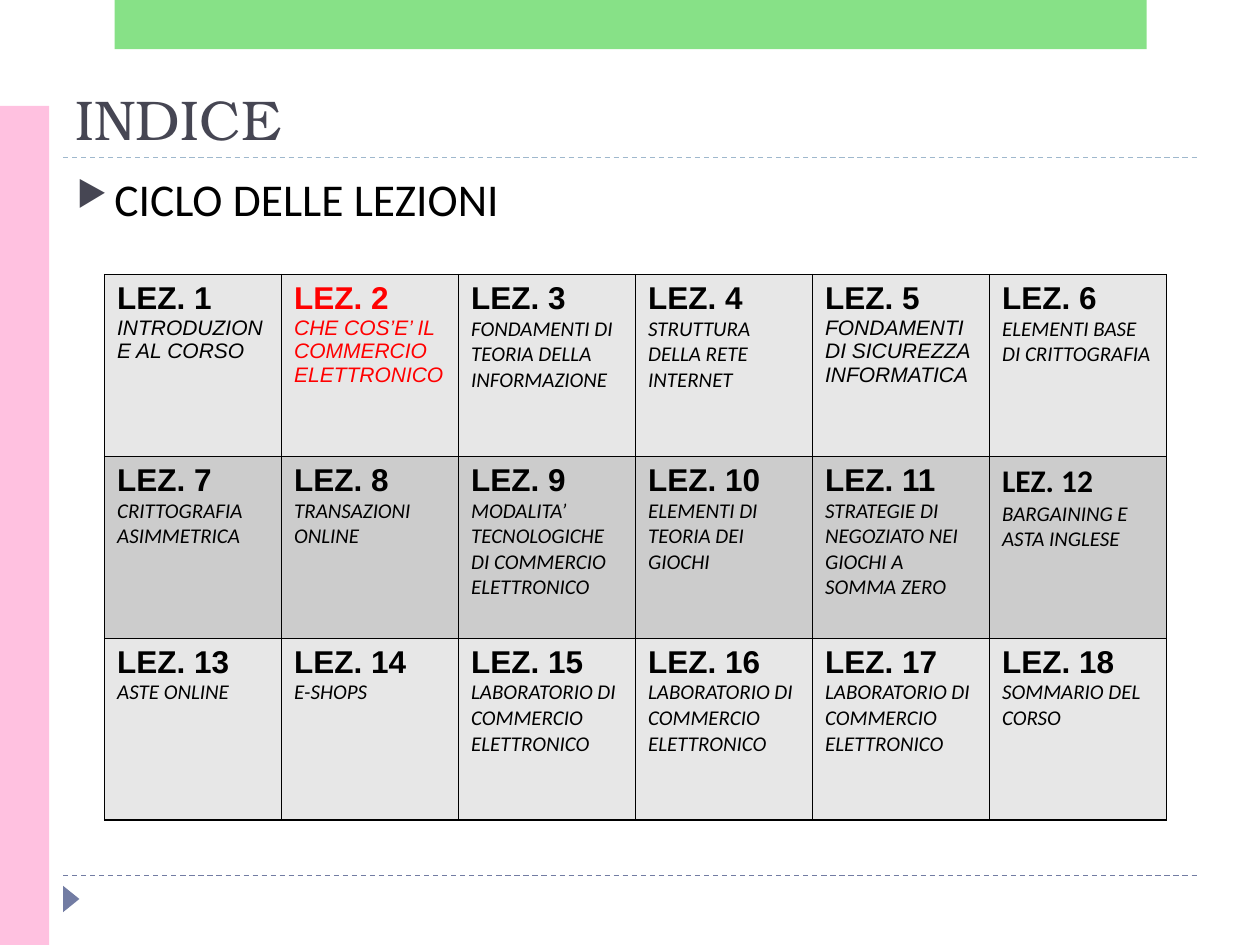
from dataclasses import dataclass

from lxml import etree
from pptx import Presentation
from pptx import util as u
from pptx.dml.color import RGBColor
from pptx.enum import dml, shapes, text
from pptx.oxml import ns

EMU_PER_PX = 9144


@dataclass(frozen=True)
class Theme:
    ink: str = "000000"
    heading: str = "464653"
    accent: str = "727CA3"
    rule: str = "9FB8CD"
    pink: str = "FFC1E0"
    green: str = "62D862"
    highlight: str = "FF0000"
    bands: tuple = ("E7E7E7", "CCCCCC")
    serif: str = "TeX Gyre Bonum"
    sans: str = "Calibri"
    plain: str = "Arial"
    title_size: int = 32
    body_size: int = 26
    lesson_size: int = 18
    topic_size: int = 12


THEME = Theme()
LESSONS = [
    ["INTRODUZIONE AL CORSO", "CHE COS’E’ IL COMMERCIO ELETTRONICO",
     "FONDAMENTI DI TEORIA DELLA\vINFORMAZIONE", "STRUTTURA DELLA RETE INTERNET",
     "FONDAMENTI DI SICUREZZA INFORMATICA", "ELEMENTI BASE DI CRITTOGRAFIA"],
    ["CRITTOGRAFIA ASIMMETRICA", "TRANSAZIONI ONLINE",
     "MODALITA’ TECNOLOGICHE DI COMMERCIO ELETTRONICO", "ELEMENTI DI TEORIA DEI GIOCHI",
     "STRATEGIE DI NEGOZIATO NEI GIOCHI A SOMMA ZERO", "BARGAINING E ASTA INGLESE"],
    ["ASTE ONLINE", "E-SHOPS"] + ["LABORATORIO DI COMMERCIO ELETTRONICO"] * 3
    + ["SOMMARIO DEL CORSO"],
]
CURRENT_LESSON = 2
PLAIN_TOPICS = {1, 2, 5}
SANS_NUMBERS = {12}


def px(value):
    return u.Emu(value * EMU_PER_PX)


def rgb(value):
    return RGBColor.from_string(value)


def add_element(parent, tag, **attributes):
    return etree.SubElement(parent, ns.qn(tag), attributes)


def write(paragraph, words, *, size, font, color=THEME.ink, bold=False, italic=False):
    paragraph.text = words
    for run in paragraph.runs:
        run.font.size = u.Pt(size)
        run.font.name = font
        run.font.color.rgb = rgb(color)
        run.font.bold = bold
        run.font.italic = italic


def add_text_box(slide, box, anchor):
    frame = slide.shapes.add_textbox(*map(px, box)).text_frame
    frame.word_wrap = True
    frame.vertical_anchor = anchor
    return frame.paragraphs[0]


def add_block(slide, kind, box, color, opacity=100):
    shape = slide.shapes.add_shape(kind, *map(px, box))
    shape.shadow.inherit = False
    shape.fill.solid()
    shape.fill.fore_color.rgb = rgb(color)
    shape.line.fill.background()
    if opacity < 100:
        fill = shape.fill.fore_color._xFill
        add_element(fill[0], "a:alpha", val=str(opacity * 1000))
    return shape


def add_rule(slide, left, top, width, color):
    line = slide.shapes.add_connector(
        shapes.MSO_CONNECTOR.STRAIGHT, px(left), px(top), px(left + width), px(top))
    line.line.color.rgb = rgb(color)
    line.line.width = u.Pt(0.75)
    line.line.dash_style = dml.MSO_LINE.DASH
    add_element(line._element.spPr, "a:effectLst")


def add_decoration(slide, box):
    left, top, width, height = box
    rectangle = shapes.MSO_SHAPE.RECTANGLE
    add_rule(slide, left + 50, top + 695, width - 100, THEME.accent)
    add_rule(slide, left + 50, top + 125, width - 100, THEME.rule)
    marker = add_block(slide, shapes.MSO_SHAPE.ISOSCELES_TRIANGLE,
                       (left + 46, top + 707, 21, 13), THEME.accent)
    marker.rotation = 90
    add_block(slide, rectangle, (left, top + 84, 39, height - 84), THEME.pink)
    add_block(slide, rectangle, (left + 91, top, 819, 39), THEME.green, opacity=76)


def add_title(slide, box):
    paragraph = add_text_box(slide, box, text.MSO_ANCHOR.BOTTOM)
    write(paragraph, "INDICE", size=THEME.title_size, font=THEME.serif, color=THEME.heading)


def add_bullet_line(slide, box):
    paragraph = add_text_box(slide, box, text.MSO_ANCHOR.TOP)
    properties = paragraph._p.get_or_add_pPr()
    properties.set("marL", str(px(30)))
    properties.set("indent", str(-px(30)))
    bullet_color = add_element(properties, "a:buClr")
    add_element(bullet_color, "a:srgbClr", val=THEME.heading)
    add_element(properties, "a:buSzPct", val="76000")
    add_element(properties, "a:buChar", char="▶")
    write(paragraph, "CICLO DELLE LEZIONI", size=THEME.body_size, font=THEME.sans)


def add_borders(cell):
    properties = cell._tc.get_or_add_tcPr()
    for side in ("a:lnL", "a:lnR", "a:lnT", "a:lnB"):
        line = add_element(properties, side, w=str(u.Pt(1)))
        fill = add_element(line, "a:solidFill")
        add_element(fill, "a:srgbClr", val=THEME.ink)


def fill_lesson_cell(cell, number, topic, band):
    add_borders(cell)
    cell.fill.solid()
    cell.fill.fore_color.rgb = rgb(band)
    color = THEME.highlight if number == CURRENT_LESSON else THEME.ink
    frame = cell.text_frame
    write(frame.paragraphs[0], f"LEZ. {number}", size=THEME.lesson_size, bold=True,
          font=THEME.sans if number in SANS_NUMBERS else THEME.plain, color=color)
    write(frame.add_paragraph(), topic, size=THEME.topic_size, italic=True,
          font=THEME.plain if number in PLAIN_TOPICS else THEME.sans, color=color)


def add_lesson_table(slide, box):
    row_count, column_count = len(LESSONS), len(LESSONS[0])
    table = slide.shapes.add_table(row_count, column_count, *map(px, box)).table
    for column in table.columns:
        column.width = px(box[2]) // column_count
    for row in table.rows:
        row.height = px(box[3]) // row_count
    for row_index, topics in enumerate(LESSONS):
        band = THEME.bands[row_index % 2]
        for column_index, topic in enumerate(topics):
            number = row_index * column_count + column_index + 1
            fill_lesson_cell(table.cell(row_index, column_index), number, topic, band)


def main():
    presentation = Presentation()
    presentation.slide_width = px(1000)
    presentation.slide_height = px(750)
    slide = presentation.slides.add_slide(presentation.slide_layouts[6])
    add_decoration(slide, (0, 0, 1000, 750))
    add_title(slide, (50, 55, 900, 70))
    add_bullet_line(slide, (51, 131, 900, 79))
    add_lesson_table(slide, (83, 218, 843, 433))
    presentation.save("out.pptx")


if __name__ == "__main__":
    main()
